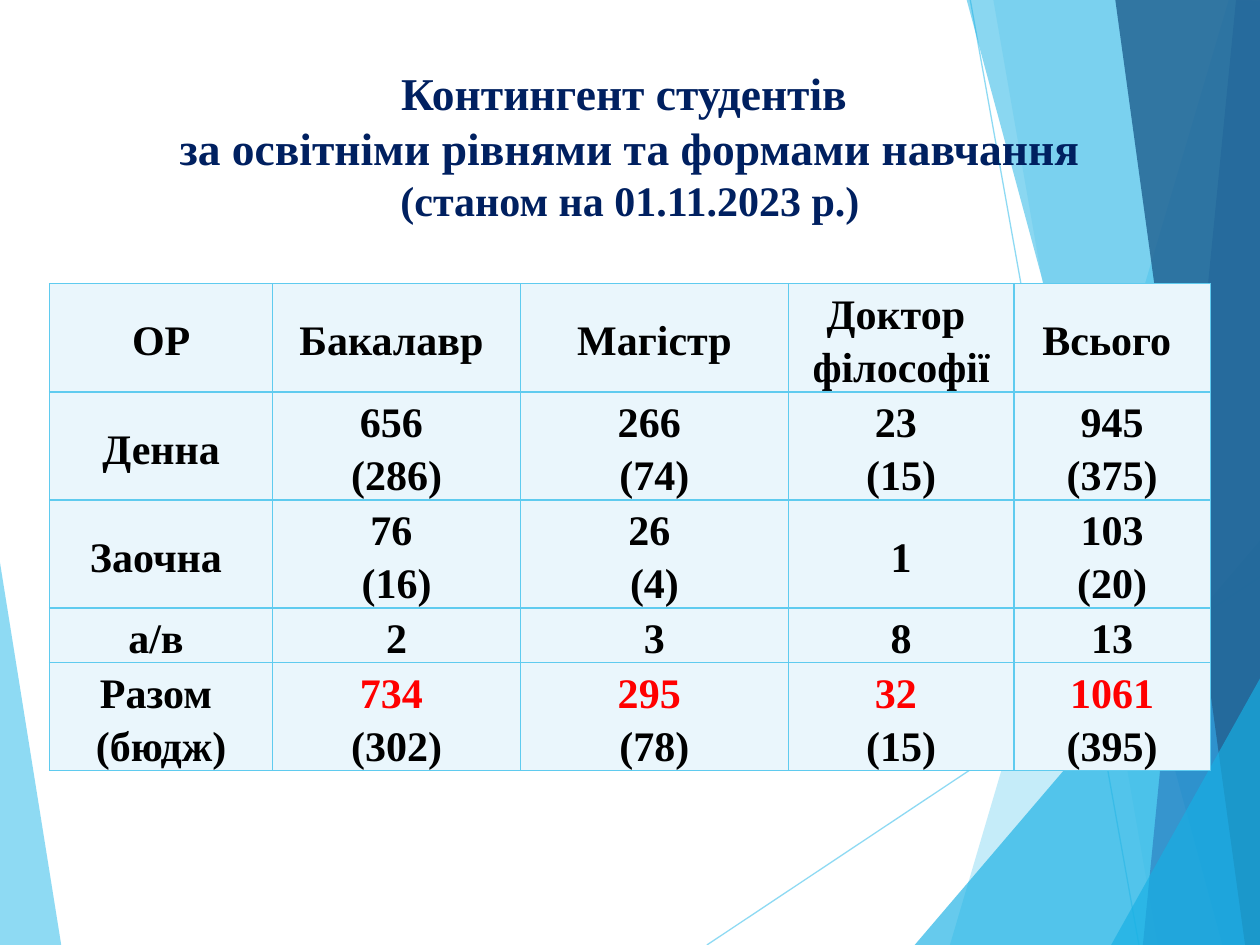
from dataclasses import dataclass

import pptx
import pptx.dml.color
import pptx.enum.shapes
import pptx.enum.text
import pptx.oxml
import pptx.oxml.ns
import pptx.util
from pptx.util import Cm


@dataclass(frozen=True)
class Theme:
    font: str = "Times New Roman"
    title_size: int = 26
    text_size: int = 24
    title: str = "002060"
    text: str = "000000"
    total: str = "FF0000"
    cell: str = "EAF6FC"
    sky: str = "5FCBEF"
    azure: str = "17B0E4"
    blue: str = "2E83C3"
    navy: str = "226292"


THEME = Theme()
TITLE = (
    ("Контингент студентів \nза освітніми рівнями та формами навчання\n", THEME.title_size),
    ("(станом на 01.11.2023 р.)", THEME.text_size),
)
ROWS = (
    ("ОР", "Бакалавр ", "Магістр", "Доктор \nфілософії", "Всього "),
    ("Денна", "656 \n(286)", "266 \n(74)", "23 \n(15)", "945\n(375)"),
    ("Заочна ", "76 \n(16)", "26 \n(4)", "1", "103\n(20)"),
    ("а/в ", "2", "3", "8", "13"),
    ("Разом \n(бюдж)", "734 \n(302)", "295 \n(78)", "32 \n(15)", "1061\n(395)"),
)
COLUMN_WIDTHS = (4.5, 5, 5.4, 4.55, 3.96)
LINE_HEIGHT = 1.09

# Points in cm, fill colour, opacity in percent; from back to front.
LEFT_WEDGE = (((-0.03, 11.15), (1.24, 19.08), (-0.03, 19.05)), THEME.sky, 70)
RIGHT_FACETS = (
    (((24.77, 0), (19.15, 19.05), (25.45, 19.08), (25.43, 0.03)), THEME.sky, 36),
    (((20.02, -0.03), (23.34, 19.05), (25.43, 19.05), (25.43, -0.03)), THEME.sky, 20),
    (((18.44, 19.05), (25.4, 10.9), (25.43, 19.05)), THEME.azure, 66),
    (((19.48, -0.03), (24.64, 19.05), (25.43, 19.03), (25.43, -0.03)), THEME.azure, 50),
    (((24.92, -0.03), (23.04, 19.05), (25.43, 19.05), (25.4, -0.03)), THEME.blue, 70),
    (((22.48, -0.03), (25.1, 19.05), (25.45, 19.05), (25.4, -0.03)), THEME.navy, 82),
    (((22.4, 19.05), (25.45, 13.59), (25.45, 19.05)), THEME.azure, 66),
)
RAYS = (((14.25, 19.05), (25.43, 11.61)), ((19.56, 0), (22.96, 19.05)))


def rgb(color):
    return pptx.dml.color.RGBColor.from_string(color)


def paint(fill, color, opacity=100):
    fill.solid()
    fill.fore_color.rgb = rgb(color)
    if opacity < 100:
        value = fill._xPr.find(".//" + pptx.oxml.ns.qn("a:srgbClr"))
        alpha = pptx.oxml.parse_xml(f'<a:alpha {pptx.oxml.ns.nsdecls("a")} val="{opacity * 1000}"/>')
        value.append(alpha)


def write_text(para, text, *, size=THEME.text_size, color=THEME.text, spacing=None):
    """Add centred bold text; a newline becomes a line break."""
    para.alignment = pptx.enum.text.PP_ALIGN.CENTER
    if spacing:
        para.line_spacing = spacing
    for index, piece in enumerate(text.split("\n")):
        if index:
            para.add_line_break()
        if piece:
            span = para.add_run()
            span.text = piece
            span.font.name = THEME.font
            span.font.size = pptx.util.Pt(size)
            span.font.bold = True
            span.font.color.rgb = rgb(color)


def draw_facet(page, left, top, points, color, opacity):
    corners = [(Cm(left + x), Cm(top + y)) for x, y in points]
    builder = page.shapes.build_freeform(*corners[0])
    builder.add_line_segments(corners[1:], close=True)
    facet = builder.convert_to_shape()
    facet.shadow.inherit = False
    facet.line.fill.background()
    paint(facet.fill, color, opacity)


def draw_ray(page, left, top, start, end):
    ray = page.shapes.add_connector(
        pptx.enum.shapes.MSO_CONNECTOR.STRAIGHT,
        Cm(left + start[0]), Cm(top + start[1]), Cm(left + end[0]), Cm(top + end[1]),
    )
    ray.line.width = pptx.util.Pt(0.75)
    paint(ray.line.fill, THEME.sky, 70)
    ray._element.spPr.append(pptx.oxml.parse_xml(f'<a:effectLst {pptx.oxml.ns.nsdecls("a")}/>'))


def draw_backdrop(page, left, top):
    draw_facet(page, left, top, *LEFT_WEDGE)
    for start, end in RAYS:
        draw_ray(page, left, top, start, end)
    for facet in RIGHT_FACETS:
        draw_facet(page, left, top, *facet)


def place_title(page, left, top, width, height):
    title = page.shapes.title
    page.shapes._spTree.append(title._element)  # in front of the backdrop
    title.left, title.top, title.width, title.height = map(Cm, (left, top, width, height))
    frame = title.text_frame
    frame.word_wrap = True
    frame.auto_size = pptx.enum.text.MSO_AUTO_SIZE.NONE
    frame.vertical_anchor = pptx.enum.text.MSO_ANCHOR.TOP
    frame.margin_top = Cm(0.2)
    for text, size in TITLE:
        write_text(frame.paragraphs[0], text, size=size, color=THEME.title)


def add_borders(cell):
    properties = cell._tc.get_or_add_tcPr()
    for index, side in enumerate(("lnL", "lnR", "lnT", "lnB")):
        border = pptx.oxml.parse_xml(
            f'<a:{side} {pptx.oxml.ns.nsdecls("a")} w="12700"><a:solidFill>'
            f'<a:srgbClr val="{THEME.sky}"/></a:solidFill></a:{side}>'
        )
        properties.insert(index, border)


def fill_cell(cell, text, is_total):
    cell.vertical_anchor = pptx.enum.text.MSO_ANCHOR.MIDDLE
    cell.margin_left = cell.margin_right = cell.margin_top = Cm(0.02)
    cell.margin_bottom = 0
    paint(cell.fill, THEME.cell)
    add_borders(cell)
    for index, line in enumerate(text.split("\n")):
        para = cell.text_frame.add_paragraph() if index else cell.text_frame.paragraphs[0]
        color = THEME.total if is_total and index == 0 else THEME.text
        write_text(para, line, color=color, spacing=1.15)


def place_table(page, left, top, width):
    heights = [LINE_HEIGHT * max(text.count("\n") + 1 for text in row) for row in ROWS]
    table = page.shapes.add_table(
        len(ROWS), len(COLUMN_WIDTHS), Cm(left), Cm(top), Cm(width), Cm(sum(heights))
    ).table
    table.first_row = table.horz_banding = False
    for column, share in zip(table.columns, COLUMN_WIDTHS):
        column.width = Cm(width * share / sum(COLUMN_WIDTHS))
    for row_index, (row, height) in enumerate(zip(ROWS, heights)):
        table.rows[row_index].height = Cm(height)
        for column_index, text in enumerate(row):
            is_total = row_index == len(ROWS) - 1 and column_index > 0
            fill_cell(table.cell(row_index, column_index), text, is_total)


def main():
    deck = pptx.Presentation()
    deck.slide_width, deck.slide_height = Cm(25.4), Cm(19.05)
    page = deck.slides.add_slide(deck.slide_layouts[5])
    draw_backdrop(page, 0, 0)
    place_title(page, 1.78, 1.12, 21.84, 4.22)
    place_table(page, 1, 5.72, 23.4)
    deck.save("out.pptx")


if __name__ == "__main__":
    main()
